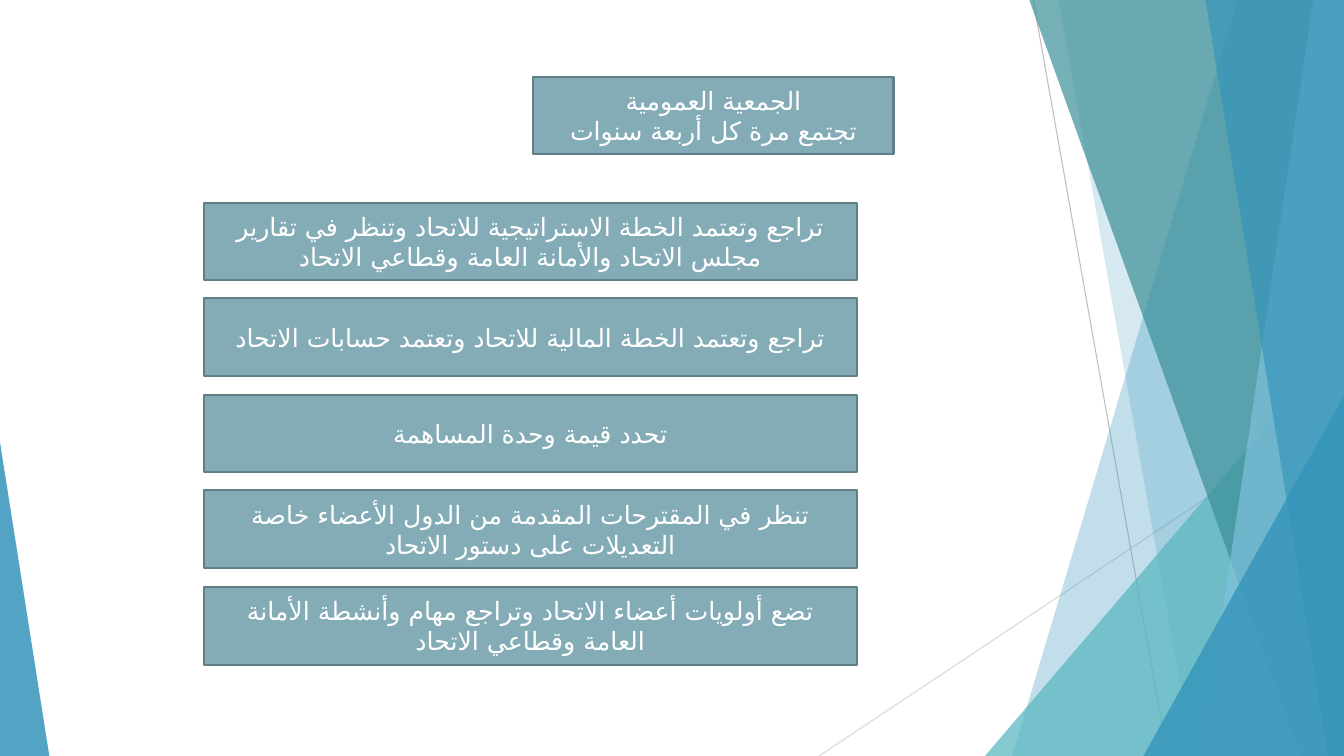
import pptx
import pptx.dml.color
import pptx.enum.shapes
import pptx.enum.text
import pptx.oxml.ns
import pptx.util
import lxml.etree

PX = 9525
WIDE, HIGH = 1280, 720
SHAPE = pptx.enum.shapes.MSO_SHAPE
qn = pptx.oxml.ns.qn


def px(n):
    return pptx.util.Emu(n * PX)


def tint(part, color):
    part.solid()
    part.fore_color.rgb = pptx.dml.color.RGBColor.from_string(color)


def write(shape, text, font="Lato", script="DejaVu Sans", size=18, color="FFFFFF"):
    frame = shape.text_frame
    frame.text = text
    frame.word_wrap = True
    frame.auto_size = pptx.enum.text.MSO_AUTO_SIZE.NONE
    frame.vertical_anchor = pptx.enum.text.MSO_ANCHOR.MIDDLE
    for para in frame.paragraphs:
        para.alignment = pptx.enum.text.PP_ALIGN.CENTER
        para._p.get_or_add_pPr().set("rtl", "1")
        for run in para.runs:
            run.font.name = font
            run.font.size = pptx.util.Pt(size)
            tint(run.font.fill, color)
            face = lxml.etree.SubElement(run._r.get_or_add_rPr(), qn("a:cs"))
            face.set("typeface", script)


class Deck:
    box_fill = "84ACB6"
    box_edge = "627F87"

    def __init__(self):
        self.file = pptx.Presentation()
        self.file.slide_width = px(WIDE)
        self.file.slide_height = px(HIGH)
        self.slide = self.file.slides.add_slide(self.file.slide_layouts[5])
        self.shapes = self.slide.shapes

    def line(self, x1, y1, x2, y2, color):
        kind = pptx.enum.shapes.MSO_CONNECTOR.STRAIGHT
        line = self.shapes.add_connector(kind, px(x1), px(y1), px(x2), px(y2))
        tint(line.line.fill, color)
        line.line.width = pptx.util.Pt(0.75)
        lxml.etree.SubElement(line._element.spPr, qn("a:effectLst"))

    def glass(self, shape, color, alpha):
        shape.shadow.inherit = False
        tint(shape.fill, color)
        shape.line.fill.background()
        tone = shape._element.spPr.find(qn("a:solidFill"))[0]
        lxml.etree.SubElement(tone, qn("a:alpha")).set("val", str(alpha * 1000))

    def band(self, top, foot, color, alpha):
        path = self.shapes.build_freeform(top, -1, scale=PX)
        path.add_line_segments([(WIDE, -1), (WIDE, HIGH), (foot, HIGH)])
        self.glass(path.convert_to_shape(), color, alpha)

    def wedge(self, x, y, wide, tip, color, alpha):
        spot = px(x), px(y), px(wide), px(HIGH - y)
        shape = self.shapes.add_shape(SHAPE.ISOSCELES_TRIANGLE, *spot)
        shape.adjustments[0] = tip
        self.glass(shape, color, alpha)

    def dress(self, shape, text):
        tint(shape.fill, self.box_fill)
        tint(shape.line.fill, self.box_edge)
        shape.line.width = pptx.util.Pt(1.5)
        write(shape, text)

    def title(self, x, y, wide, high, text):
        head = self.shapes.title
        head.left, head.top, head.width, head.height = map(px, (x, y, wide, high))
        self.dress(head, text)

    def box(self, x, y, wide, high, text):
        spot = px(x), px(y), px(wide), px(high)
        shape = self.shapes.add_shape(SHAPE.RECTANGLE, *spot)
        shape.shadow.inherit = False
        self.dress(shape, text)


DUTIES = [
    "تراجع وتعتمد الخطة الاستراتيجية للاتحاد وتنظر في تقارير مجلس الاتحاد والأمانة العامة وقطاعي الاتحاد",
    "تراجع وتعتمد الخطة المالية للاتحاد وتعتمد حسابات الاتحاد",
    "تحدد قيمة وحدة المساهمة",
    "تنظر في المقترحات المقدمة من الدول الأعضاء خاصة التعديلات على دستور الاتحاد",
    "تضع أولويات أعضاء الاتحاد وتراجع مهام وأنشطة الأمانة العامة وقطاعي الاتحاد",
]


def main():
    deck = Deck()
    deck.line(984, 0, 1112, HIGH, "BFBFBF")
    deck.line(WIDE, 387, 780, HIGH, "D9D9D9")
    deck.band(1179, 964, "3494BA", 30)
    deck.band(1008, 1136, "3494BA", 20)
    deck.wedge(938, 320, 342, 1, "58B6C0", 72)
    deck.band(980, 1239, "3A8F98", 70)
    deck.band(1251, 1144, "7FC1DB", 70)
    deck.band(1148, 1265, "3494BA", 65)
    deck.wedge(1089, 377, 191, 1, "3494BA", 80)
    deck.wedge(0, 421, 47, 0, "3494BA", 85)

    deck.title(508, 73, 343, 74, "الجمعية العمومية\nتجتمع مرة كل أربعة سنوات")
    for row, duty in enumerate(DUTIES):
        deck.box(194, 193 + row * 183 // 2, 622, 74, duty)
    deck.file.save("out.pptx")


if __name__ == "__main__":
    main()
